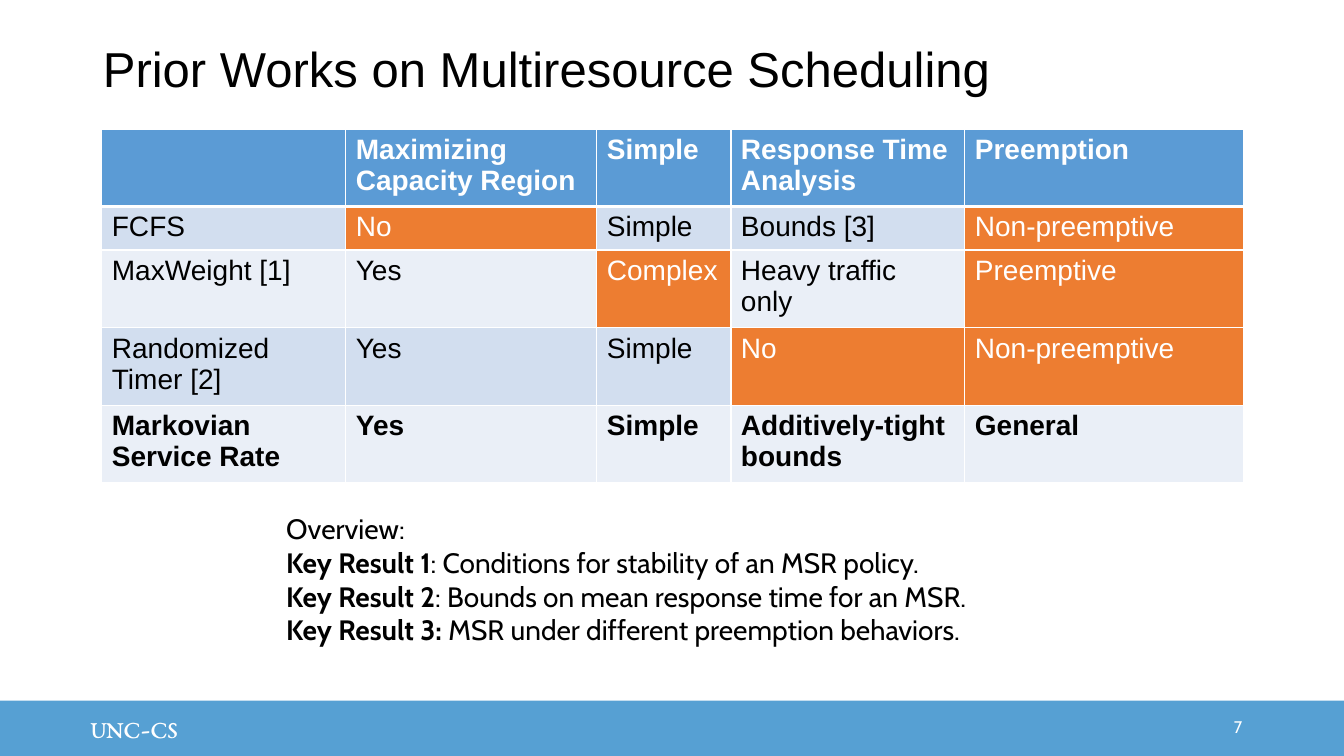
from dataclasses import dataclass

from lxml.etree import SubElement
from pptx import Presentation
from pptx.dml.color import RGBColor
from pptx.enum.shapes import MSO_SHAPE
from pptx.enum.text import MSO_ANCHOR as Anchor, MSO_AUTO_SIZE as AutoSize, PP_ALIGN as Align
from pptx.oxml.ns import qn
from pptx.slide import Slide
from pptx.table import _Cell as Cell
from pptx.text.text import Font, TextFrame
from pptx.util import Emu, Pt

PX = 9144  # EMU per px, 100 px to the inch
WHITE, BLACK = "FFFFFF", "000000"
BAR_BLUE, HEADER_BLUE, ORANGE = "56A0D3", "5B9BD5", "ED7D31"
BANDS = ("D2DEEF", "EAEFF7")
COLUMN_WIDTHS = (242, 249, 133, 232, 277)


@dataclass(frozen=True)
class Row:
    height: int
    texts: tuple[str, ...]
    drawbacks: tuple[int, ...] = ()  # columns filled orange
    bold: bool = False


@dataclass(frozen=True)
class KeyResult:
    label: str
    statement: str


ROWS = (
    Row(76, ("", "Maximizing Capacity Region", "Simple", "Response Time Analysis", "Preemption"), bold=True),
    Row(43, ("FCFS", "No", "Simple", "Bounds [3]", "Non-preemptive"), (1, 4)),
    Row(77, ("MaxWeight [1]", "Yes", "Complex", "Heavy traffic only", "Preemptive"), (2, 4)),
    Row(77, ("Randomized Timer [2]", "Yes", "Simple", "No", "Non-preemptive"), (3, 4)),
    Row(77, ("Markovian Service Rate", "Yes", "Simple", "Additively-tight bounds", "General"), bold=True),
)
KEY_RESULTS = (
    KeyResult("Key Result 1", ": Conditions for stability of an MSR policy."),
    KeyResult("Key Result 2", ": Bounds on mean response time for an MSR."),
    KeyResult("Key Result 3: ", "MSR under different preemption behaviors."),
)


def px(*lengths: int) -> list[Emu]:
    return [Emu(length * PX) for length in lengths]


def rgb(color: str) -> RGBColor:
    return RGBColor.from_string(color)


def style(font: Font, name: str, size: int, color: str, bold: bool = False) -> None:
    font.name, font.size, font.bold = name, Pt(size), bold
    font.color.rgb = rgb(color)


def set_insets(frame: TextFrame, left: int, top: int, right: int, bottom: int) -> None:
    frame.margin_left, frame.margin_top, frame.margin_right, frame.margin_bottom = px(left, top, right, bottom)


def add_borders(cell: Cell, top: int, bottom: int) -> None:
    """Draw white cell borders; top and bottom widths are in points."""
    properties = cell._tc.get_or_add_tcPr()
    for side, width in (("L", 1), ("R", 1), ("T", top), ("B", bottom)):
        line = SubElement(properties, qn(f"a:ln{side}"), w=str(Pt(width)))
        fill = SubElement(line, qn("a:solidFill"))
        SubElement(fill, qn("a:srgbClr"), val=WHITE)


def add_footer(slide: Slide) -> None:
    bar = slide.shapes.add_shape(MSO_SHAPE.RECTANGLE, *px(0, 695, 1334, 55))
    bar.shadow.inherit = False
    bar.fill.solid()
    bar.fill.fore_color.rgb = rgb(BAR_BLUE)
    bar.line.fill.background()
    frame = bar.text_frame
    frame.text = "UNC-CS"
    frame.vertical_anchor = Anchor.MIDDLE
    set_insets(frame, 90, 5, 10, 5)
    frame.paragraphs[0].alignment = Align.LEFT
    style(frame.paragraphs[0].runs[0].font, "EB Garamond", 18, WHITE)

    number = slide.shapes.add_textbox(*px(1092, 701, 150, 40)).text_frame
    number.text = "7"
    number.word_wrap = True
    number.vertical_anchor = Anchor.MIDDLE
    number.paragraphs[0].alignment = Align.RIGHT
    style(number.paragraphs[0].runs[0].font, "Cabin", 12, WHITE)


def set_title(slide: Slide, text: str) -> None:
    title = slide.shapes.title
    title.left, title.top, title.width, title.height = px(92, -1, 1150, 145)
    frame = title.text_frame
    frame.text = text
    frame.auto_size = AutoSize.NONE
    frame.vertical_anchor = Anchor.MIDDLE
    set_insets(frame, 10, 10, 10, 10)
    paragraph = frame.paragraphs[0]
    paragraph.alignment = Align.LEFT
    paragraph.line_spacing = 0.9
    style(paragraph.runs[0].font, "Arial", 35, BLACK)


def add_comparison(slide: Slide) -> None:
    height = sum(row.height for row in ROWS)
    area = px(101, 128, sum(COLUMN_WIDTHS), height)
    table = slide.shapes.add_table(len(ROWS), len(COLUMN_WIDTHS), *area).table
    for column, width in zip(table.columns, COLUMN_WIDTHS):
        column.width = Emu(width * PX)
    for row_index, row in enumerate(ROWS):
        table.rows[row_index].height = Emu(row.height * PX)
        is_header = row_index == 0
        base_fill = HEADER_BLUE if is_header else BANDS[(row_index - 1) % 2]
        for column_index, text in enumerate(row.texts):
            cell = table.cell(row_index, column_index)
            is_drawback = column_index in row.drawbacks
            add_borders(cell, top=3 if row_index == 1 else 1, bottom=3 if is_header else 1)
            cell.fill.solid()
            cell.fill.fore_color.rgb = rgb(ORANGE if is_drawback else base_fill)
            cell.text_frame.text = text
            color = WHITE if is_header or is_drawback else BLACK
            style(cell.text_frame.paragraphs[0].font, "Arial", 20, color, row.bold)
            for run in cell.text_frame.paragraphs[0].runs:
                style(run.font, "Arial", 20, color, row.bold)


def add_overview(slide: Slide) -> None:
    frame = slide.shapes.add_textbox(*px(274, 503, 702, 145)).text_frame
    frame.word_wrap = False
    frame.auto_size = AutoSize.SHAPE_TO_FIT_TEXT
    frame.text = "Overview:"
    style(frame.paragraphs[0].runs[0].font, "Cabin", 20, BLACK)
    for result in KEY_RESULTS:
        paragraph = frame.add_paragraph()
        for text, bold in ((result.label, True), (result.statement, False)):
            run = paragraph.add_run()
            run.text = text
            style(run.font, "Cabin", 20, BLACK, bold)


def main() -> None:
    presentation = Presentation()
    presentation.slide_width, presentation.slide_height = px(1333, 750)
    slide = presentation.slides.add_slide(presentation.slide_layouts.get_by_name("Title Only"))
    set_title(slide, "Prior Works on Multiresource Scheduling")
    add_footer(slide)
    add_overview(slide)
    add_comparison(slide)
    presentation.save("out.pptx")


if __name__ == "__main__":
    main()
